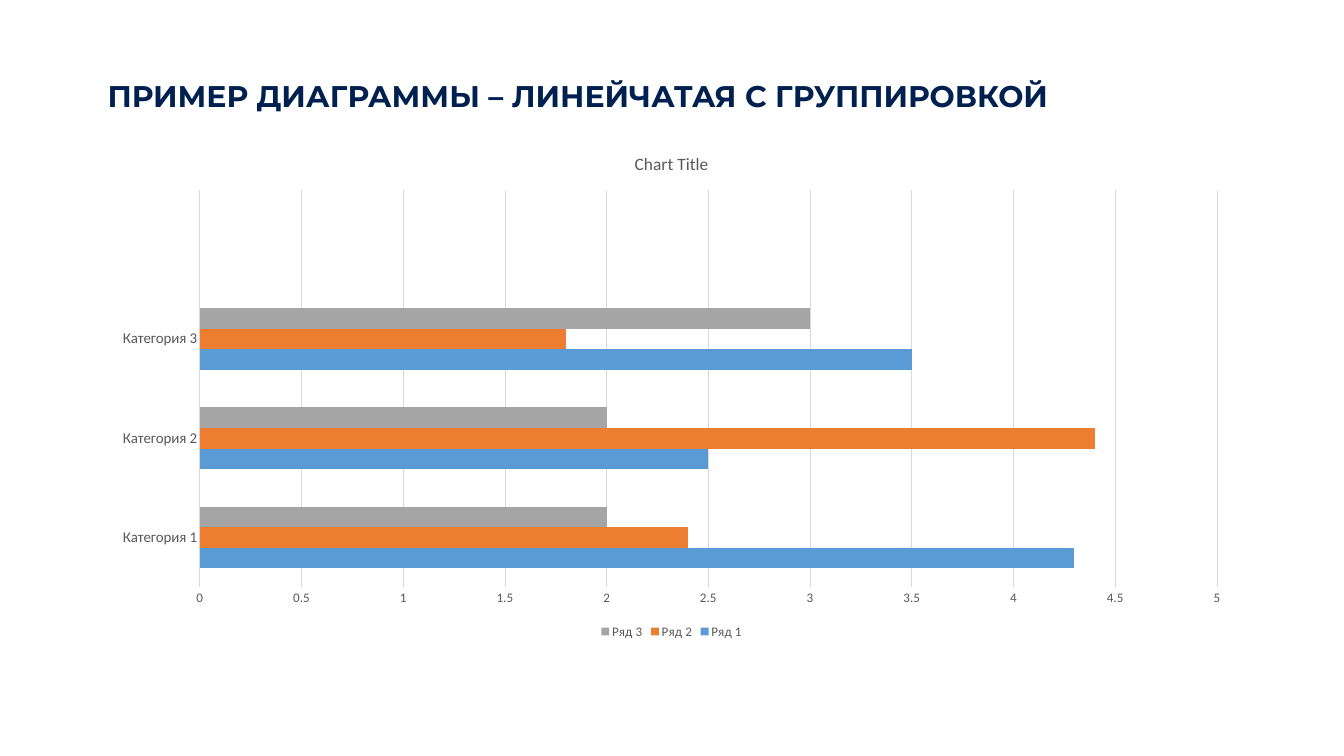
from pptx import Presentation
from pptx.chart.data import CategoryChartData
from pptx.dml.color import RGBColor
from pptx.enum.chart import XL_CHART_TYPE, XL_LEGEND_POSITION, XL_TICK_MARK
from pptx.enum.text import MSO_ANCHOR, PP_ALIGN
from pptx.util import Cm, Pt

BAR = XL_CHART_TYPE.BAR_CLUSTERED
BOTTOM = XL_LEGEND_POSITION.BOTTOM
NO_TICK = XL_TICK_MARK.NONE
MIDDLE = MSO_ANCHOR.MIDDLE
LEFT = PP_ALIGN.LEFT

NAVY, GREY, PALE = "00204F", "595959", "D9D9D9"
# The last category is left empty
CATS = ["Категория 1", "Категория 2", "Категория 3", ""]
ROWS = [
    ("Ряд 1", "5B9BD5", (4.3, 2.5, 3.5, None)),
    ("Ряд 2", "ED7D31", (2.4, 4.4, 1.8, None)),
    ("Ряд 3", "A5A5A5", (2, 2, 3, None)),
]


def color(code):
    return RGBColor.from_string(code)


def style(font, size, code=GREY, face="Calibri", bold=False):
    font.size, font.name, font.bold = Pt(size), face, bold
    font.color.rgb = color(code)


def write(frame, text, **form):
    """Put one formatted line of text in a text frame."""
    para = frame.paragraphs[0]
    run = para.add_run()
    run.text = text
    style(run.font, **form)
    return para


def rule(line):
    line.color.rgb = color(PALE)
    line.width = Pt(0.75)


def add_title(slide, box, text):
    title = slide.shapes.title
    title.left, title.top, title.width, title.height = box
    frame = title.text_frame
    frame.word_wrap = True
    frame.vertical_anchor = MIDDLE
    para = write(frame, text, size=32, code=NAVY, face="Montserrat", bold=True)
    para.alignment = LEFT
    para.line_spacing = 0.9


def add_bars(slide, box):
    data = CategoryChartData()
    data.categories = CATS
    for name, _, vals in ROWS:
        data.add_series(name, vals)
    chart = slide.shapes.add_chart(BAR, *box, data).chart
    style(chart.font, 10, "000000")

    # Heading and legend
    write(chart.chart_title.text_frame, "Chart Title", size=18.6)
    chart.chart_title.include_in_layout = False
    chart.has_legend = True
    chart.legend.position = BOTTOM
    chart.legend.include_in_layout = False
    style(chart.legend.font, 14)

    # Bars
    plot = chart.plots[0]
    plot.gap_width = 182
    plot.vary_by_categories = False
    for bars, (_, code, _) in zip(plot.series, ROWS):
        bars.format.fill.solid()
        bars.format.fill.fore_color.rgb = color(code)
        bars.invert_if_negative = False

    # Axes
    cat, val = chart.category_axis, chart.value_axis
    for axis, size in ((cat, 16), (val, 14)):
        axis.major_tick_mark = axis.minor_tick_mark = NO_TICK
        style(axis.tick_labels.font, size)
    rule(cat.format.line)
    val.format.line.fill.background()
    val.minimum_scale, val.maximum_scale, val.major_unit = 0, 5, 0.5
    val.has_major_gridlines = True
    rule(val.major_gridlines.format.line)


def main():
    deck = Presentation()
    deck.slide_width, deck.slide_height = Cm(50.8), Cm(28.58)
    slide = deck.slides.add_slide(deck.slide_layouts[5])
    add_title(slide, (Cm(3.81), Cm(2.29), Cm(43.89), Cm(2.79)),
              "ПРИМЕР ДИАГРАММЫ – ЛИНЕЙЧАТАЯ С ГРУППИРОВКОЙ")
    add_bars(slide, (Cm(3.78), Cm(5.08), Cm(43.21), Cm(19.2)))
    deck.save("out.pptx")


if __name__ == "__main__":
    main()
